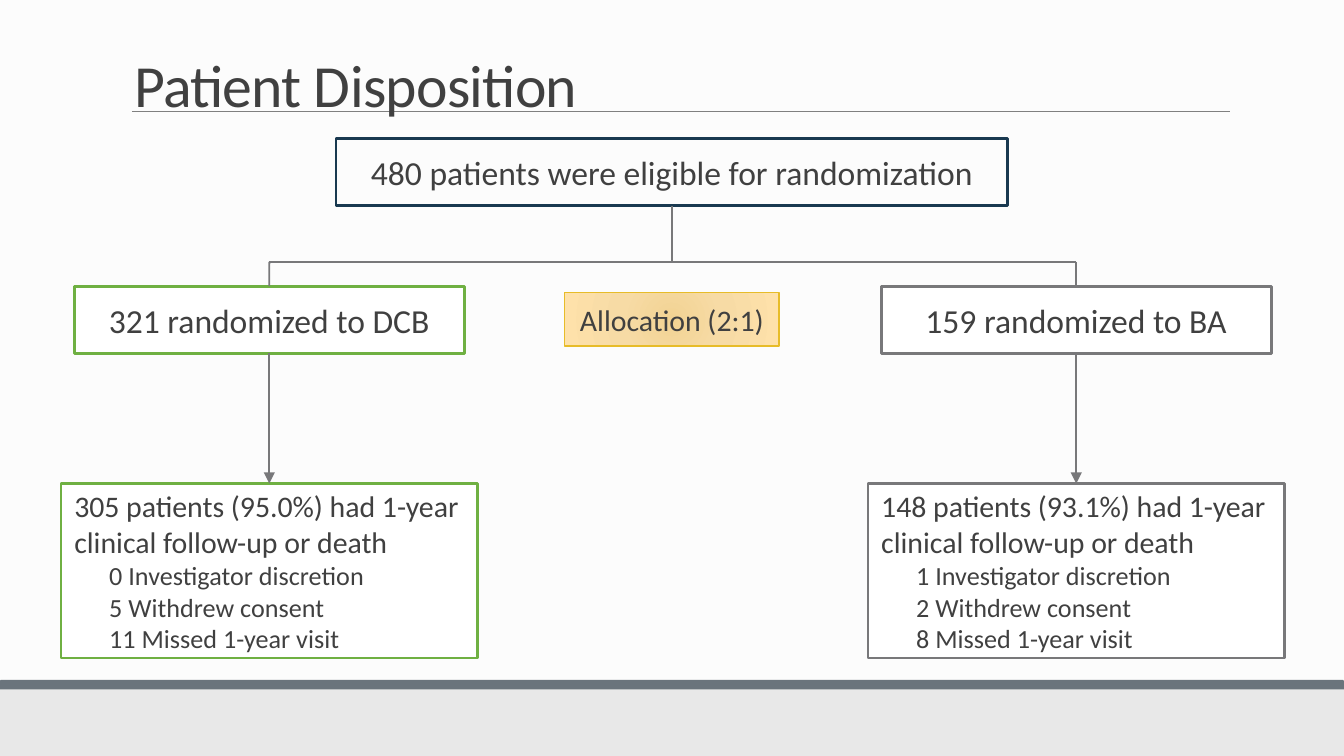
"""Build the patient disposition flow chart slide."""
from lxml import etree
from pptx import Presentation
from pptx.dml.color import RGBColor
from pptx.enum import shapes, text
from pptx.oxml import parse_xml
from pptx.oxml.ns import nsdecls, qn
from pptx.util import Cm, Pt

FONT = "Calibri"
COLORS = {
    "background": "FCFCFC", "footer": "E8E8E8", "band": "6A747C",
    "rule": "808080", "text": "404040", "white": "FFFFFF",
    "eligible": "193950", "dcb": "6FB042", "gray": "78787A", "gold": "E7BC29",
}
GRADIENT = [(0, "F2D393"), (45, "F7DBA5"), (100, "FEE1AA")]
TITLE = "Patient Disposition"
ELIGIBLE = "480 patients were eligible for randomization"
ALLOCATION = "Allocation (2:1)"
ARMS = [
    (5.09, "dcb", "321 randomized to DCB",
     "305 patients (95.0%) had 1-year clinical follow-up or death",
     ["0 Investigator discretion", "5 Withdrew consent", "11 Missed 1-year visit"]),
    (20.34, "gray", "159 randomized to BA",
     "148 patients (93.1%) had 1-year clinical follow-up or death",
     ["1 Investigator discretion", "2 Withdrew consent", "8 Missed 1-year visit"]),
]
WIDTH, HEIGHT = 25.4, 14.29
CENTER = WIDTH / 2
BRANCH_Y = 4.95
ARM_Y, FOLLOW_Y = 5.41, 9.14


def rgb(name):
    return RGBColor.from_string(COLORS[name])


def add_rect(s, x, y, w, h, fill=None, line=None, weight=1.5,
             kind=shapes.MSO_SHAPE.RECTANGLE):
    sp = s.shapes.add_shape(kind, Cm(x), Cm(y), Cm(w), Cm(h))
    sp.shadow.inherit = False
    if fill:
        sp.fill.solid()
        sp.fill.fore_color.rgb = rgb(fill)
    else:
        sp.fill.background()
    if line:
        sp.line.color.rgb = rgb(line)
        sp.line.width = Pt(weight)
    else:
        sp.line.fill.background()
    return sp


def write(tf, lines, align=text.PP_ALIGN.CENTER, anchor=text.MSO_ANCHOR.MIDDLE):
    tf.word_wrap = True
    tf.vertical_anchor = anchor
    for i, (content, size, indent) in enumerate(lines):
        p = tf.paragraphs[0] if i == 0 else tf.add_paragraph()
        p.text = content
        p.alignment = align
        if indent:
            p._p.get_or_add_pPr().set("marL", str(Cm(indent)))
        p.font.name, p.font.size = FONT, Pt(size)
        p.font.color.rgb = rgb("text")


def add_box(s, center, y, w, h, line, lines, fill="white", weight=1.5,
            align=text.PP_ALIGN.CENTER):
    sp = add_rect(s, center - w / 2, y, w, h, fill, line, weight)
    write(sp.text_frame, lines, align)
    return sp


def add_line(s, x1, y1, x2, y2, color="gray", weight=1, start=None, end=None,
             arrow=False):
    cx = s.shapes.add_connector(shapes.MSO_CONNECTOR.STRAIGHT,
                                Cm(x1), Cm(y1), Cm(x2), Cm(y2))
    cx.line.color.rgb = rgb(color)
    cx.line.width = Pt(weight)
    if arrow:
        etree.SubElement(cx.line._get_or_add_ln(), qn("a:tailEnd"), type="triangle")
    etree.SubElement(cx._element.spPr, qn("a:effectLst"))
    if start:
        cx.begin_connect(start, 2)
    if end:
        cx.end_connect(end, 0)


def set_radial_fill(sp):
    stops = "".join(f'<a:gs pos="{pos * 1000}"><a:srgbClr val="{color}"/></a:gs>'
                    for pos, color in GRADIENT)
    grad = parse_xml(
        f'<a:gradFill {nsdecls("a")} rotWithShape="1"><a:gsLst>{stops}</a:gsLst>'
        '<a:path path="circle"><a:fillToRect l="100000" t="100000" '
        'r="100000" b="100000"/></a:path></a:gradFill>')
    old = sp._element.spPr.find(qn("a:solidFill"))
    old.getparent().replace(old, grad)


def add_frame(s):
    s.background.fill.solid()
    s.background.fill.fore_color.rgb = rgb("background")
    add_rect(s, 0, 12.9, WIDTH, HEIGHT - 12.9, "footer")
    add_rect(s, 0, 12.85, WIDTH, 0.18, "band",
             kind=shapes.MSO_SHAPE.ROUND_2_SAME_RECTANGLE)
    add_line(s, 2.49, 2.1, 23.24, 2.1, "rule", 0.5)
    tf = s.shapes.add_textbox(Cm(2.29), Cm(0.61), Cm(20.95), Cm(1.78)).text_frame
    write(tf, [(TITLE, 32, 0)], text.PP_ALIGN.LEFT, text.MSO_ANCHOR.BOTTOM)
    p = tf.paragraphs[0]
    p.line_spacing = 0.85
    p.runs[0]._r.get_or_add_rPr().set("spc", "-40")


def main():
    prs = Presentation()
    prs.slide_width, prs.slide_height = Cm(WIDTH), Cm(HEIGHT)
    s = prs.slides.add_slide(prs.slide_layouts[6])
    add_frame(s)

    eligible = add_box(s, CENTER, 2.62, 12.7, 1.27, "eligible",
                       [(ELIGIBLE, 18, 0)], fill=None)
    add_line(s, CENTER, 3.89, CENTER, BRANCH_Y, start=eligible)
    add_line(s, ARMS[0][0], BRANCH_Y, ARMS[1][0], BRANCH_Y)

    for center, color, arm, summary, reasons in ARMS:
        group = add_box(s, center, ARM_Y, 7.37, 1.27, color, [(arm, 18, 0)])
        follow = add_box(s, center, FOLLOW_Y, 7.87, 3.3, color,
                         [(summary, 16, 0)] + [(r, 14, 0.66) for r in reasons],
                         align=text.PP_ALIGN.LEFT)
        add_line(s, center, BRANCH_Y, center, ARM_Y, end=group)
        add_line(s, center, ARM_Y + 1.27, center, FOLLOW_Y,
                 start=group, end=follow, arrow=True)

    allocation = add_box(s, CENTER, 5.53, 4.06, 1.02, "gold",
                         [(ALLOCATION, 16, 0)], weight=1)
    set_radial_fill(allocation)
    tf = allocation.text_frame
    tf.margin_left = tf.margin_right = tf.margin_top = tf.margin_bottom = Cm(0.13)
    prs.save("out.pptx")


if __name__ == "__main__":
    main()
